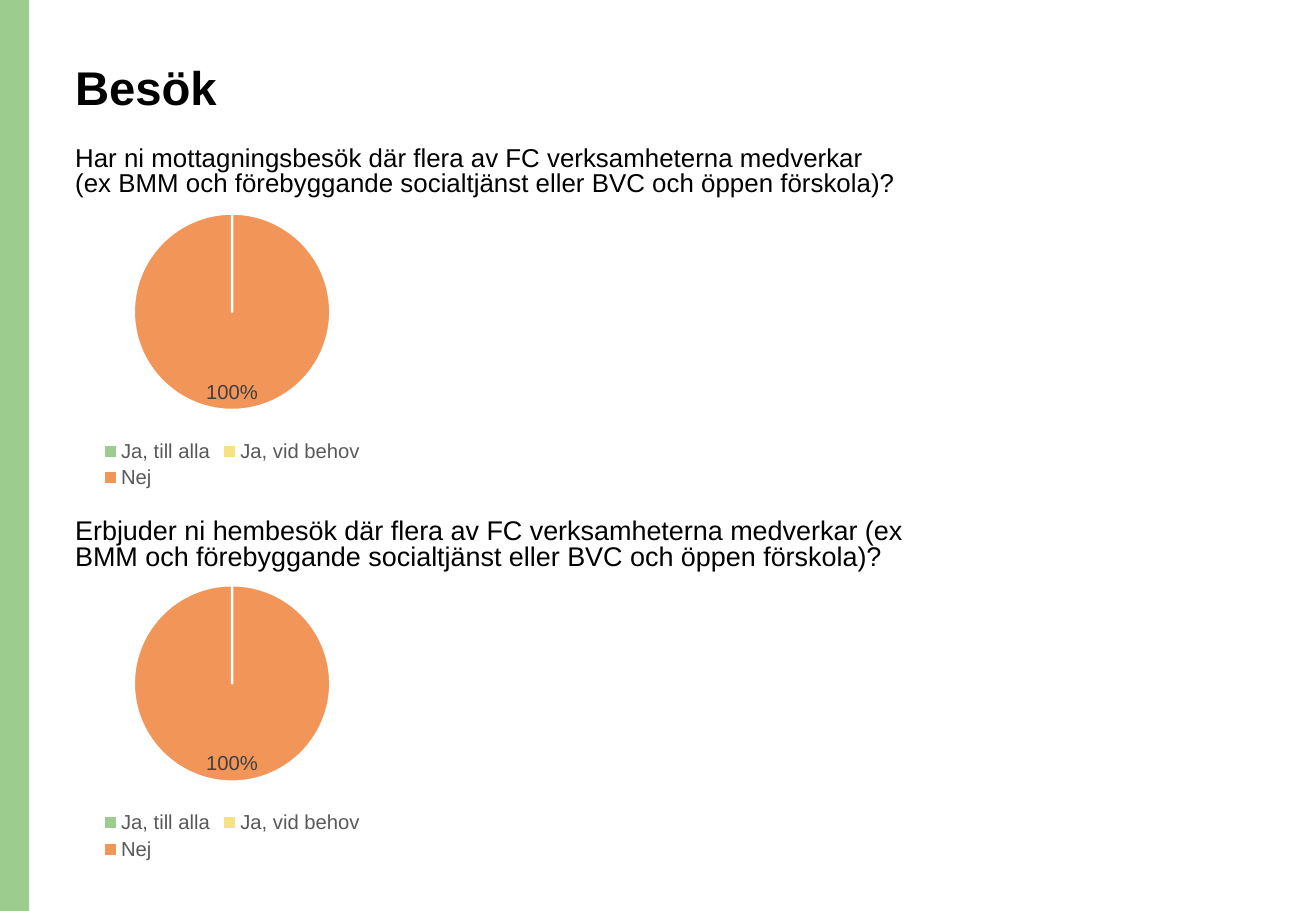
from lxml import etree
from pptx import Presentation
from pptx.chart.data import CategoryChartData
from pptx.dml.color import RGBColor
from pptx.enum.chart import XL_CHART_TYPE, XL_LABEL_POSITION, XL_LEGEND_POSITION
from pptx.enum.shapes import MSO_SHAPE
from pptx.oxml.ns import qn
from pptx.util import Inches, Pt

PIE = XL_CHART_TYPE.PIE
INSIDE = XL_LABEL_POSITION.INSIDE_END
BOTTOM = XL_LEGEND_POSITION.BOTTOM
RECT = MSO_SHAPE.RECTANGLE

HEX = {"green": "9DCC8F", "yellow": "F6E183", "orange": "F29559",
       "black": "000000", "white": "FFFFFF", "label": "404040", "legend": "595959"}
RGB = {name: RGBColor.from_string(code) for name, code in HEX.items()}
LEFT = 0.52

deck = Presentation()
deck.slide_width, deck.slide_height = Inches(10.83), Inches(7.5)
slide = deck.slides.add_slide(deck.slide_layouts[6])


def set_font(font, size, color="black", bold=False):
    font.name, font.size, font.bold = "Arial", Pt(size), bold
    font.color.rgb = RGB[color]


def add_text(text, top, width, height, size, space, bold=False):
    box = slide.shapes.add_textbox(*map(Inches, (LEFT, top, width, height)))
    box.text_frame.word_wrap = True
    para = box.text_frame.paragraphs[0]
    para.line_spacing = space
    run = para.add_run()
    run.text = text
    set_font(run.font, size, bold=bold)


# Green edge
edge = slide.shapes.add_shape(RECT, 0, 0, Inches(0.24), deck.slide_height)
edge.shadow.inherit = False
edge.fill.solid()
edge.fill.fore_color.rgb = RGB["green"]
edge.line.fill.background()

# Title
add_text("Besök", 0.48, 9.34, 1.02, 28, 0.9, bold=True)

# Questions, each with its pie below
tail = "där flera av FC verksamheterna medverkar (ex BMM och förebyggande socialtjänst eller BVC och öppen förskola)?"
asks = [("Har ni mottagningsbesök", 1.17, 7.01, 15.3),
        ("Erbjuder ni hembesök", 4.23, 7.49, 16)]
answers = [("Ja, till alla", 0, "green"), ("Ja, vid behov", 0, "yellow"), ("Nej", 1, "orange")]

for start, top, width, size in asks:
    add_text(f"{start} {tail}", top, width, 0.57, size, 0.8)

    data = CategoryChartData(number_format="0%")
    data.categories = [name for name, _, _ in answers]
    data.add_series("Series 1", [share for _, share, _ in answers])
    spot = map(Inches, (LEFT, top + 0.45, 2.78, 2.44))
    chart = slide.shapes.add_chart(PIE, *spot, data).chart
    chart.has_title = False
    set_font(chart.font, 10)

    # Legend
    chart.has_legend = True
    chart.legend.position = BOTTOM
    chart.legend.include_in_layout = False
    set_font(chart.legend.font, 12, "legend")

    # Labels
    plot = chart.plots[0]
    plot.vary_by_categories = True
    series = plot.series[0]
    labels = series.data_labels
    labels.show_value = True
    labels.show_percentage = False
    labels.number_format, labels.number_format_is_linked = "0%", False
    labels.position = INSIDE
    set_font(labels.font, 12, "label")

    # Slices; an empty slice has no label
    block = series.format.fill and series.points[0] and chart.element.find(".//" + qn("c:dLbls"))
    for index, (_, share, color) in enumerate(answers):
        look = series.points[index].format
        look.fill.solid()
        look.fill.fore_color.rgb = RGB[color]
        look.line.color.rgb = RGB["white"]
        look.line.width = Pt(1.5)
        if not share:
            mark = etree.Element(qn("c:dLbl"))
            etree.SubElement(mark, qn("c:idx")).set("val", str(index))
            etree.SubElement(mark, qn("c:delete")).set("val", "1")
            block.insert(index, mark)

deck.save("out.pptx")
